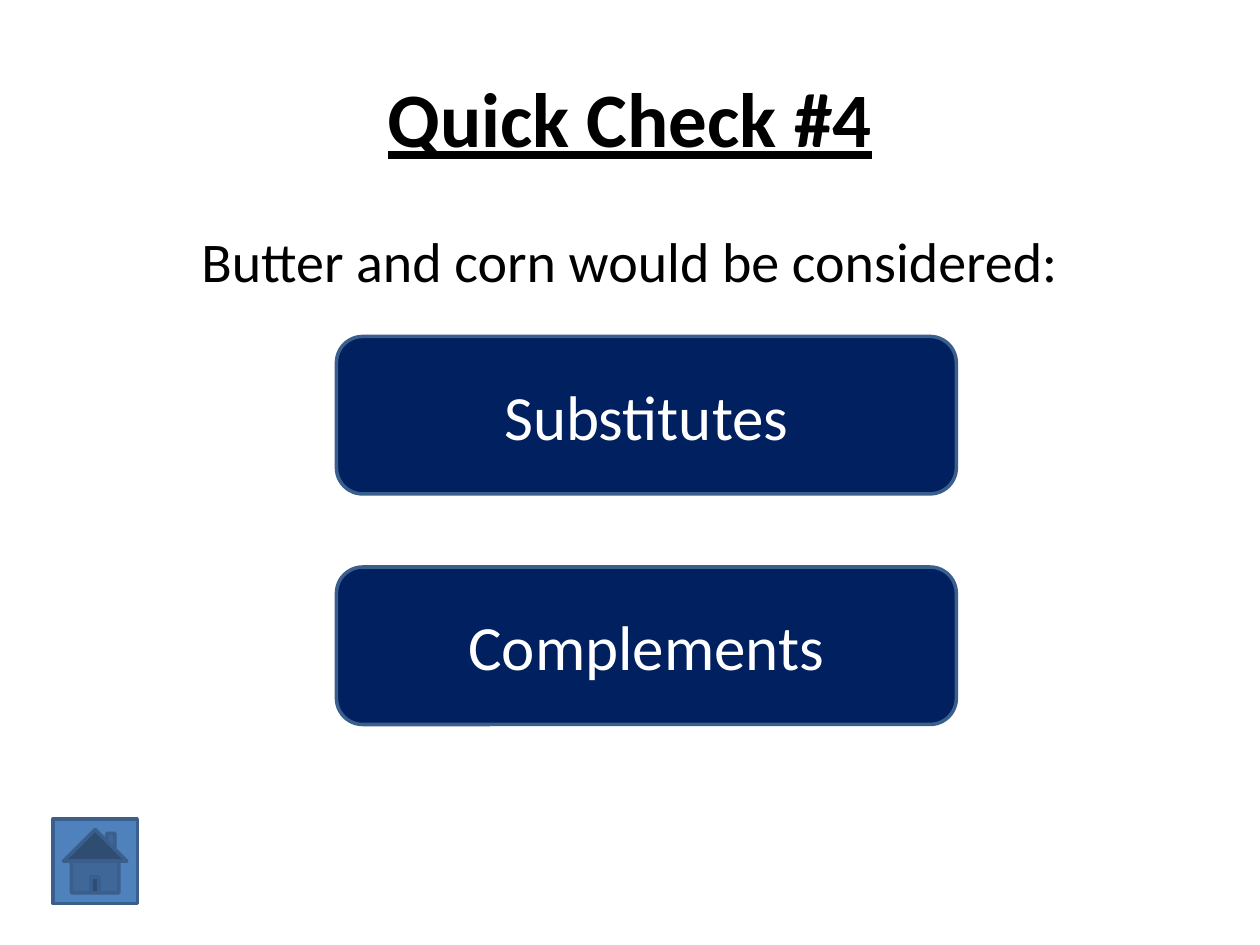
from pptx import Presentation
from pptx.dml.color import RGBColor
from pptx.enum.shapes import MSO_SHAPE
from pptx.enum.text import MSO_ANCHOR, PP_ALIGN
from pptx.util import Pt

PX = 9144  # 100 px to the inch
ROUND = MSO_SHAPE.ROUNDED_RECTANGLE
HOME = MSO_SHAPE.ACTION_BUTTON_HOME
MID, TOP = MSO_ANCHOR.MIDDLE, MSO_ANCHOR.TOP
CENTER = PP_ALIGN.CENTER

prs = Presentation()
prs.slide_width, prs.slide_height = 1000 * PX, 750 * PX
slide = prs.slides.add_slide(prs.slide_layouts[6])


def color(code):
    return RGBColor.from_string(code)


def write(shape, text, size, code, anchor=MID):
    frame = shape.text_frame
    frame.word_wrap = True
    frame.vertical_anchor = anchor
    para = frame.paragraphs[0]
    para.alignment = CENTER
    run = para.add_run()
    run.text = text
    run.font.name = "Calibri"
    run.font.size = Pt(size)
    run.font.color.rgb = color(code)
    return run


# Title
title = slide.shapes.add_textbox(50 * PX, 30 * PX, 900 * PX, 125 * PX)
run = write(title, "Quick Check #4", 44, "000000")
run.font.bold = True
run.font.underline = True

# Question
body = slide.shapes.add_textbox(50 * PX, 175 * PX, 900 * PX, 495 * PX)
write(body, "Butter and corn would be considered:", 32, "000000", TOP)

# Answer buttons and home button
buttons = [
    (ROUND, 267, 267, 492, 125, "002060", "Substitutes"),
    (ROUND, 267, 450, 492, 125, "002060", "Complements"),
    (HOME, 42, 650, 67, 67, "4F81BD", ""),
]
for kind, left, top, width, height, fill, text in buttons:
    button = slide.shapes.add_shape(
        kind, left * PX, top * PX, width * PX, height * PX)
    button.shadow.inherit = False
    button.fill.solid()
    button.fill.fore_color.rgb = color(fill)
    button.line.color.rgb = color("3A5F8C")
    button.line.width = Pt(2)
    if text:
        write(button, text, 36, "FFFFFF")

prs.save("out.pptx")
